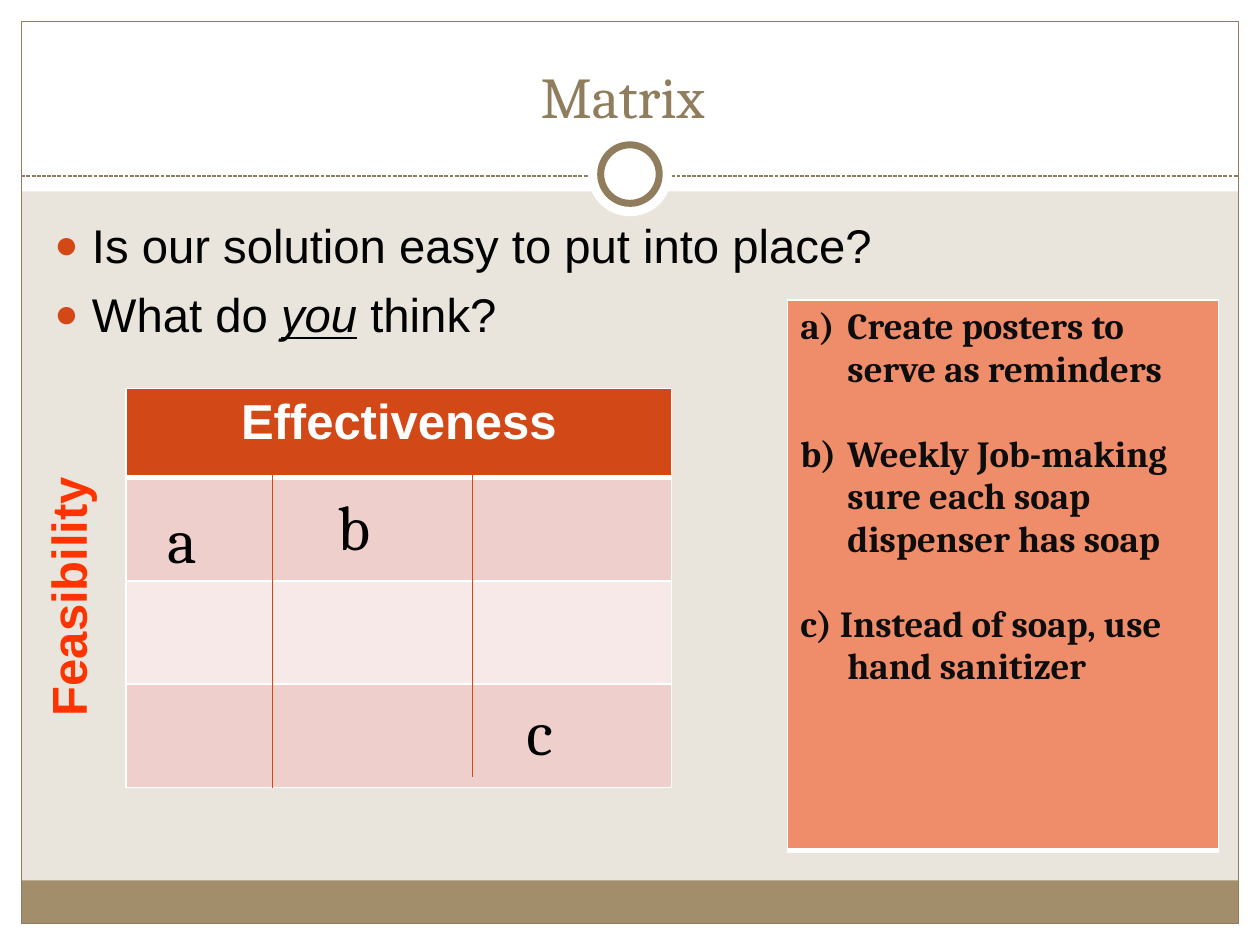
from lxml import etree
from pptx import Presentation
from pptx.dml.color import RGBColor
from pptx.enum.dml import MSO_LINE
from pptx.enum.shapes import MSO_CONNECTOR, MSO_SHAPE
from pptx.enum.text import MSO_ANCHOR, MSO_AUTO_SIZE, PP_ALIGN
from pptx.oxml.ns import qn
from pptx.util import Cm, Pt

RECT, OVAL = MSO_SHAPE.RECTANGLE, MSO_SHAPE.OVAL
LINE, DASH = MSO_CONNECTOR.STRAIGHT, MSO_LINE.SQUARE_DOT
TOP, BASE, MID = MSO_ANCHOR.TOP, MSO_ANCHOR.BOTTOM, PP_ALIGN.CENTER
FIXED = MSO_AUTO_SIZE.NONE

HUE = {
    "back": "E9E5DC", "white": "FFFFFF", "band": "A28E6A", "brown": "8F7D5E",
    "rust": "D34817", "rose": "EFCFCC", "pale": "F7E9E8", "coral": "EF8C6A",
    "ink": "0D0D0D", "black": "000000", "red": "FF3300",
}
WIDE, HIGH = 25.4, 19.05
EDGE = 0.43

DECOR = [
    (RECT, (0, HIGH - EDGE, WIDE, EDGE), "white", None, 0),
    (RECT, (0, 0, WIDE, 3.86), "white", None, 0),
    (RECT, (0, 0, EDGE, HIGH), "white", None, 0),
    (RECT, (WIDE - EDGE, 0, EDGE, HIGH), "white", None, 0),
    (RECT, (EDGE, 17.75, WIDE - 2 * EDGE, 0.87), "band", None, 0),
    (RECT, (EDGE, EDGE, WIDE - 2 * EDGE, HIGH - 2 * EDGE), None, "brown", 0.75),
]
RINGS = [
    (OVAL, (11.85, 2.66, 1.7, 1.7), "white", None, 0),
    (OVAL, (12.11, 2.92, 1.18, 1.18), "white", "brown", 4),
]
TITLE = "Matrix"
POINTS = [
    [("Is our solution easy to put into place?", False)],
    [("What do ", False), ("you", True), (" think?", False)],
]
HEAD, SIDE = "Effectiveness", "Feasibility"
ROWS = [("rust", 1.8), ("rose", 2.08), ("pale", 2.08), ("rose", 2.08)]
RULES = [(5.5, 15.88), (9.53, 15.67)]
IDEAS = [
    ("Create posters to serve as reminders", 1),
    ("Weekly Job-making sure each soap dispenser has soap", 2),
    ("c) Instead of soap, use hand sanitizer", None),
]
MARKS = [
    ("a", (3.12, 9.96, 2.4, 1.82)),
    ("b", (6.55, 9.7, 2.34, 1.8)),
    ("c", (10.36, 13.84, 2.97, 1.8)),
]


def tint(name):
    return RGBColor.from_string(HUE[name])


def place(box):
    return [Cm(n) for n in box]


def move(shape, box):
    shape.left, shape.top, shape.width, shape.height = place(box)


def node(host, tag, **vals):
    return etree.SubElement(host, qn("a:" + tag), {k: str(v) for k, v in vals.items()})


def write(para, text, size, face, hue, bold=False):
    run = para.add_run()
    run.text = text
    font = run.font
    font.size, font.name, font.bold = Pt(size), face, bold
    font.color.rgb = tint(hue)
    return font


def hang(para, depth):
    props = para._p.get_or_add_pPr()
    props.set("marL", str(Cm(depth)))
    props.set("indent", str(-Cm(depth)))
    return props


def draw(slide, kind, box, fill, line, size):
    shape = slide.shapes.add_shape(kind, *place(box))
    shape.shadow.inherit = False
    if fill:
        shape.fill.solid()
        shape.fill.fore_color.rgb = tint(fill)
    else:
        shape.fill.background()
    if line:
        shape.line.color.rgb = tint(line)
        shape.line.width = Pt(size)
    else:
        shape.line.fill.background()


def rule(slide, start, end, hue):
    line = slide.shapes.add_connector(LINE, *place(start + end))
    line.line.color.rgb = tint(hue)
    line.line.width = Pt(0.75)
    node(line._element.spPr, "effectLst")
    return line


def paint(cell, hue, base):
    cell.fill.solid()
    cell.fill.fore_color.rgb = tint(hue)
    props = cell._tc.get_or_add_tcPr()
    for spot, side in enumerate("LRTB"):
        line = node(props, "ln" + side, w=Pt(base if side == "B" else 1))
        node(node(line, "solidFill"), "srgbClr", val=HUE["white"])
        props.insert(spot, line)


def grid(slide, left, top, width, rows):
    box = place((left, top, width, sum(high for _, high in rows)))
    table = slide.shapes.add_table(len(rows), 1, *box).table
    table.horz_banding = False
    for spot, (hue, high) in enumerate(rows):
        table.rows[spot].height = Cm(high)
        paint(table.cell(spot, 0), hue, 1 if spot else 3)
    return table


def label(slide, box):
    frame = slide.shapes.add_textbox(*place(box)).text_frame
    frame.word_wrap = True
    return frame


def main():
    deck = Presentation()
    deck.slide_width, deck.slide_height = Cm(WIDE), Cm(HIGH)
    slide = deck.slides.add_slide(deck.slide_layouts[1])
    slide.background.fill.solid()
    slide.background.fill.fore_color.rgb = tint("back")

    for part in DECOR:
        draw(slide, *part)
    rule(slide, (EDGE, 3.55), (WIDE - EDGE, 3.55), "brown").line.dash_style = DASH
    for part in RINGS:
        draw(slide, *part)

    title, body = slide.placeholders
    for shape in (title, body):
        slide.shapes._spTree.append(shape._element)
        shape.text_frame.auto_size = FIXED
    move(title, (0.7, 0.64, 23.7, 2.11))
    title.text_frame.vertical_anchor = BASE
    para = title.text_frame.paragraphs[0]
    para.alignment = MID
    write(para, TITLE, 33, "Cambria", "brown")

    move(body, (0.84, 4.24, 23.62, 12.7))
    frame = body.text_frame
    frame.vertical_anchor = TOP
    for spot, runs in enumerate(POINTS):
        para = frame.add_paragraph() if spot else frame.paragraphs[0]
        para.space_before = Pt(7)
        props = hang(para, 0.76)
        node(node(props, "buClr"), "srgbClr", val=HUE["rust"])
        node(props, "buSzPct", val=85000)
        node(props, "buChar", char="●")
        for text, mark in runs:
            font = write(para, text, 27, "Arial", "black")
            font.italic = font.underline = mark

    table = grid(slide, 2.54, 7.83, 11, ROWS)
    para = table.cell(0, 0).text_frame.paragraphs[0]
    para.alignment = MID
    write(para, HEAD, 28, "Arial", "white", True)
    for left, end in RULES:
        rule(slide, (left, 9.53), (left, end), "rust")

    frame = grid(slide, 15.88, 6.05, 8.68, [("coral", 11.1)]).cell(0, 0).text_frame
    for spot, (text, start) in enumerate(IDEAS):
        para = frame.add_paragraph() if spot else frame.paragraphs[0]
        para.space_before = Pt(24.5 if spot else 0)
        props = hang(para, 0.95)
        if start:
            node(props, "buFont", typeface="Cambria")
            node(props, "buAutoNum", type="alphaLcParenR", startAt=start)
        write(para, text, 21, "Cambria", "ink", True)

    frame = label(slide, (0.64, 9.1, 1.7, 6.99))
    frame._txBody.bodyPr.set("vert", "vert270")
    para = frame.paragraphs[0]
    para._p.get_or_add_pPr().set("marL", str(Cm(1.4)))
    write(para, SIDE, 28, "Arial", "red", True)
    for text, box in MARKS:
        write(label(slide, box).paragraphs[0], text, 36, "Cambria", "black")

    deck.save("out.pptx")


if __name__ == "__main__":
    main()
